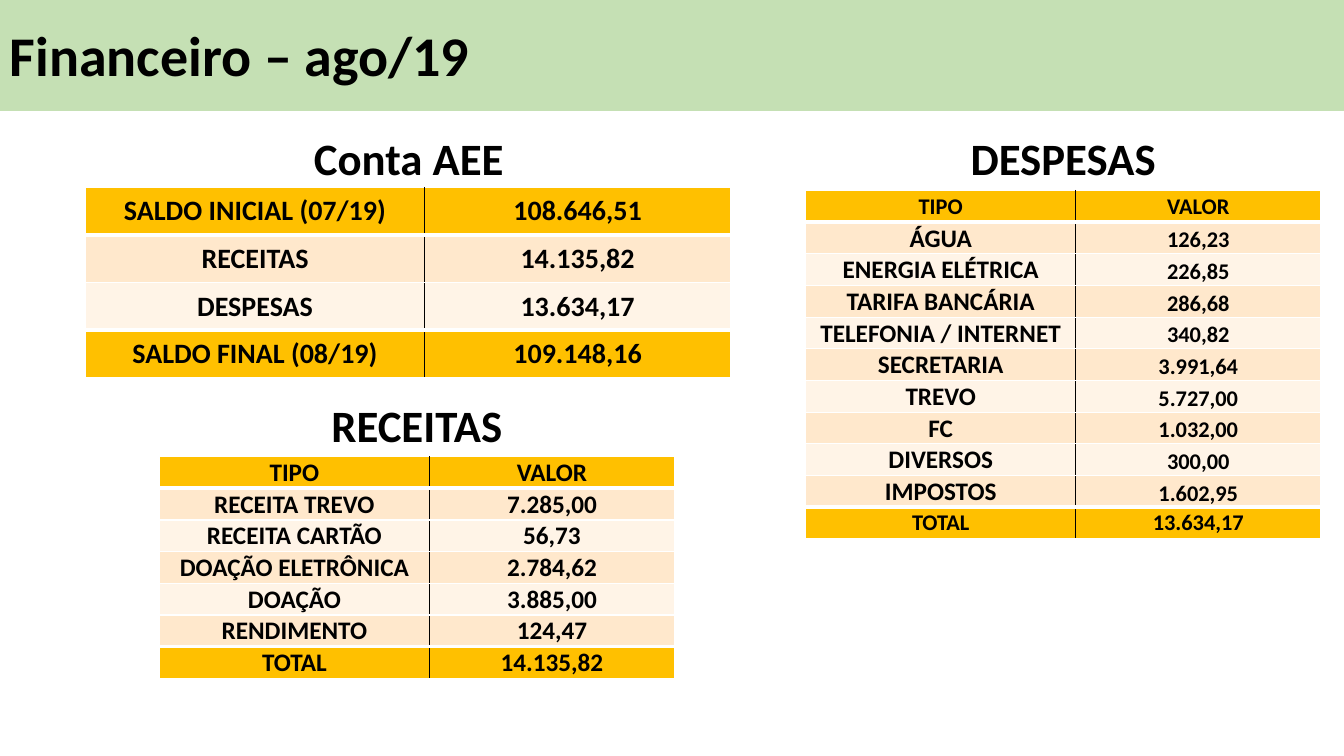
"""Build the monthly financial summary slide with its three account tables."""
from dataclasses import dataclass

import pptx
import pptx.dml.color
import pptx.enum.shapes
import pptx.enum.text
import pptx.oxml
import pptx.oxml.ns
import pptx.util
from pptx.dml.color import RGBColor
from pptx.util import Inches

BLACK = RGBColor(0x00, 0x00, 0x00)
WHITE = RGBColor(0xFF, 0xFF, 0xFF)
GREEN = RGBColor(0xC5, 0xE0, 0xB4)
AMBER = RGBColor(0xFF, 0xC0, 0x00)
PEACH = RGBColor(0xFF, 0xE8, 0xCC)
CREAM = RGBColor(0xFF, 0xF4, 0xE7)

FONT = "Calibri"
MIDDLE = pptx.enum.text.MSO_ANCHOR.MIDDLE
BOTTOM = pptx.enum.text.MSO_ANCHOR.BOTTOM
LEFT = pptx.enum.text.PP_ALIGN.LEFT
CENTER = pptx.enum.text.PP_ALIGN.CENTER
HEADING_WIDTH = 6.41
HEADING_HEIGHT = 0.64


@dataclass(frozen=True)
class Account:
    heading: str
    heading_left: float
    heading_top: float
    left: float
    top: float
    columns: tuple[float, float]
    height: float
    rows: tuple[tuple[str, str], ...]
    edge_size: int
    body_sizes: tuple[int, int]
    body_anchor: pptx.enum.text.MSO_ANCHOR
    body_insets: tuple[float, float]


ACCOUNTS = (
    Account(
        "Conta AEE", 0.85, 1.25, 0.85, 1.86, (3.36, 3.04), 1.89,
        (
            ("SALDO INICIAL (07/19)", "108.646,51"),
            ("RECEITAS", "14.135,82"),
            ("DESPESAS", "13.634,17"),
            ("SALDO FINAL (08/19)", "109.148,16"),
        ),
        20, (20, 20), MIDDLE, (0, 0),
    ),
    Account(
        "DESPESAS", 7.34, 1.25, 7.99, 1.89, (2.68, 2.43), 3.46,
        (
            ("TIPO", "VALOR"),
            ("ÁGUA", "126,23"),
            ("ENERGIA ELÉTRICA", "226,85"),
            ("TARIFA BANCÁRIA", "286,68"),
            ("TELEFONIA / INTERNET", "340,82"),
            ("SECRETARIA", "3.991,64"),
            ("TREVO", "5.727,00"),
            ("FC", "1.032,00"),
            ("DIVERSOS", "300,00"),
            ("IMPOSTOS", "1.602,95"),
            ("TOTAL", "13.634,17"),
        ),
        16, (18, 16), BOTTOM, (0, 0.01),
    ),
    Account(
        "RECEITAS", 0.93, 3.9, 1.58, 4.53, (2.68, 2.43), 2.2,
        (
            ("TIPO", "VALOR"),
            ("RECEITA TREVO", "7.285,00"),
            ("RECEITA CARTÃO", "56,73"),
            ("DOAÇÃO ELETRÔNICA", "2.784,62"),
            ("DOAÇÃO", "3.885,00"),
            ("RENDIMENTO", "124,47"),
            ("TOTAL", "14.135,82"),
        ),
        18, (18, 18), BOTTOM, (0.01, 0.01),
    ),
)


def write(frame, text: str, *, size: int, align=CENTER) -> None:
    paragraph = frame.paragraphs[0]
    paragraph.alignment = align
    run = paragraph.add_run()
    run.text = text
    run.font.name = FONT
    run.font.size = pptx.util.Pt(size)
    run.font.bold = True
    run.font.color.rgb = BLACK


def add_heading(slide, text: str, left: float, top: float, width: float,
                height: float, *, size: int, align=CENTER) -> None:
    heading = slide.shapes.add_textbox(
        Inches(left), Inches(top), Inches(width), Inches(height))
    heading.text_frame.word_wrap = True
    write(heading.text_frame, text, size=size, align=align)


def set_border(cell, side: str, color: RGBColor, points: int) -> None:
    line = pptx.oxml.parse_xml(
        f'<a:ln{side} {pptx.oxml.ns.nsdecls("a")} w="{pptx.util.Pt(points)}">'
        f'<a:solidFill><a:srgbClr val="{color}"/></a:solidFill></a:ln{side}>')
    cell._tc.get_or_add_tcPr().append(line)


def add_account(slide, account: Account) -> None:
    last = len(account.rows) - 1
    table = slide.shapes.add_table(
        len(account.rows), 2, Inches(account.left), Inches(account.top),
        Inches(sum(account.columns)), Inches(account.height)).table
    for column, width in zip(table.columns, account.columns):
        column.width = Inches(width)
    for r, entry in enumerate(account.rows):
        table.rows[r].height = Inches(account.height / len(account.rows))
        is_edge = r in (0, last)
        for c, text in enumerate(entry):
            cell = table.cell(r, c)
            inset = 0 if is_edge else account.body_insets[c]
            cell.margin_left = cell.margin_right = cell.margin_top = Inches(inset)
            cell.margin_bottom = 0
            cell.vertical_anchor = MIDDLE if is_edge else account.body_anchor
            set_border(cell, "L", BLACK if c == 1 else WHITE, 1)
            set_border(cell, "R", BLACK if c == 0 else WHITE, 1)
            set_border(cell, "T", WHITE, 3 if r in (1, last) else 1)
            set_border(cell, "B", WHITE, 3 if r in (0, last - 1) else 1)
            cell.fill.solid()
            cell.fill.fore_color.rgb = AMBER if is_edge else PEACH if r % 2 else CREAM
            write(cell.text_frame, text,
                  size=account.edge_size if is_edge else account.body_sizes[c])
    add_heading(slide, account.heading, account.heading_left, account.heading_top,
                HEADING_WIDTH, HEADING_HEIGHT, size=32)


def main() -> None:
    deck = pptx.Presentation()
    deck.slide_width = Inches(13.33)
    deck.slide_height = Inches(7.5)
    slide = deck.slides.add_slide(deck.slide_layouts[6])
    banner = slide.shapes.add_shape(
        pptx.enum.shapes.MSO_SHAPE.RECTANGLE, 0, 0, deck.slide_width, Inches(1.1))
    banner.shadow.inherit = False
    banner.fill.solid()
    banner.fill.fore_color.rgb = GREEN
    banner.line.fill.background()
    add_heading(slide, "Financeiro – ago/19", 0, 0.15, 13.33, 0.77,
                size=40, align=LEFT)
    for account in ACCOUNTS:
        add_account(slide, account)
    deck.save("out.pptx")


if __name__ == "__main__":
    main()
